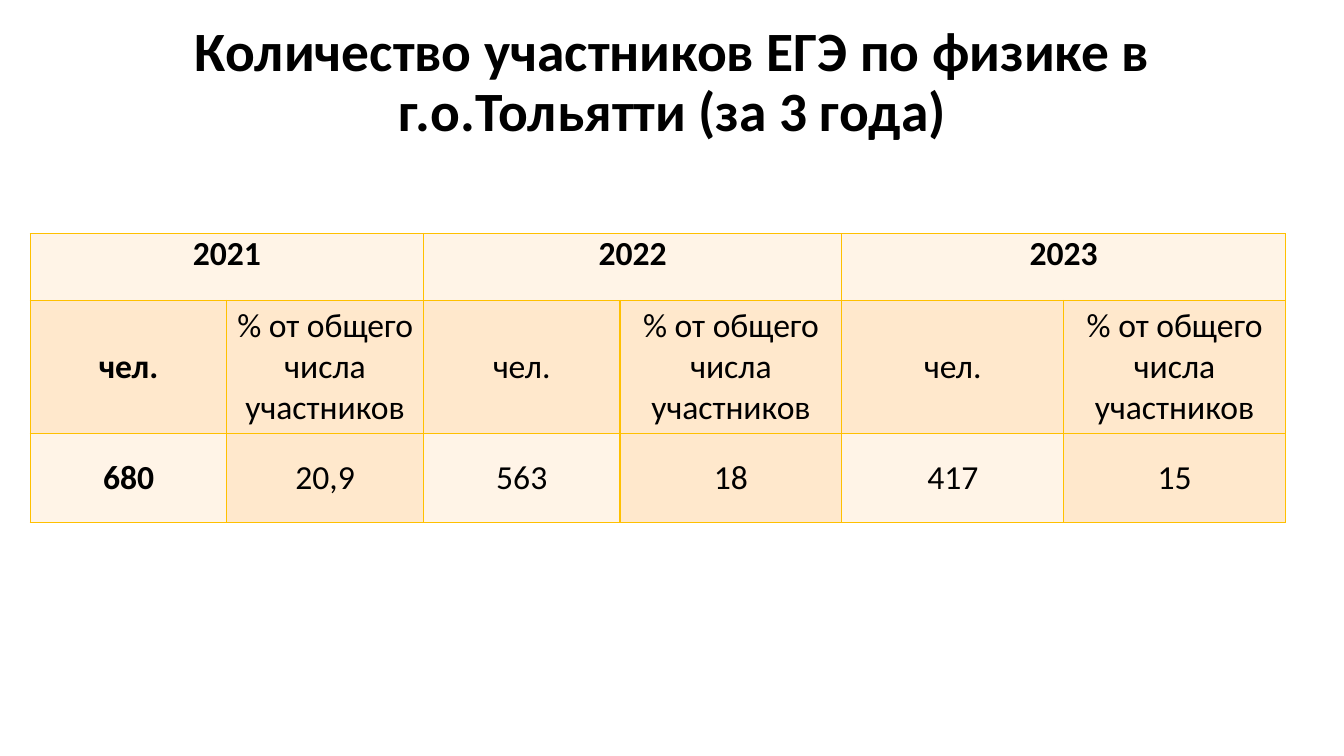
from lxml import etree
from pptx import Presentation
from pptx import util as u
from pptx.dml.color import RGBColor
from pptx.enum import text
from pptx.oxml.ns import qn

PX = 9144
FONT = "Calibri"
COLORS = {"ink": "000000", "pale": "FFF4E7", "peach": "FFE8CC", "gold": "FFC000"}
TITLE = "Количество участников ЕГЭ по физике в г.о.Тольятти (за 3\u00a0года)"
SHARE = "% от общего числа участников"
RESULTS = {"2021": ("680", "20,9"), "2022": ("563", "18"), "2023": ("417", "15")}
COL_WIDTHS = [195] * 3 + [220] * 3
ROW_HEIGHTS = [66, 132, 88]


def px(n):
    return u.Emu(n * PX)


def rgb(name):
    return RGBColor.from_string(COLORS[name])


def format_text(tf, size, bold):
    for p in tf.paragraphs:
        p.alignment = text.PP_ALIGN.CENTER
        for r in p.runs:
            r.font.name = FONT
            r.font.size = u.Pt(size)
            r.font.bold = bold
            r.font.color.rgb = rgb("ink")


def add_borders(cell):
    tc_pr = cell._tc.get_or_add_tcPr()
    for i, side in enumerate(("lnL", "lnR", "lnT", "lnB")):
        ln = etree.Element(qn(f"a:{side}"), w=str(u.Pt(1)))
        fill = etree.SubElement(ln, qn("a:solidFill"))
        etree.SubElement(fill, qn("a:srgbClr"), val=COLORS["gold"])
        tc_pr.insert(i, ln)


def fill_cell(cell, words, color, bold, anchor):
    cell.text_frame.text = words
    cell.vertical_anchor = anchor
    cell.margin_left = cell.margin_right = px(7)
    cell.margin_top = cell.margin_bottom = 0
    cell.fill.solid()
    cell.fill.fore_color.rgb = rgb(color)
    format_text(cell.text_frame, 24, bold)


def place_title(slide, left, top, width, height):
    sp = slide.shapes.title
    sp.left, sp.top, sp.width, sp.height = map(px, (left, top, width, height))
    tf = sp.text_frame
    tf.text = TITLE
    tf.word_wrap = True
    tf.auto_size = text.MSO_AUTO_SIZE.NONE
    tf.vertical_anchor = text.MSO_ANCHOR.MIDDLE
    tf.margin_bottom = px(64)
    tf.paragraphs[0].line_spacing = 0.9
    format_text(tf, 39.6, True)


def place_results(slide, left, top):
    frame = slide.shapes.add_table(
        len(ROW_HEIGHTS), len(COL_WIDTHS), px(left), px(top),
        px(sum(COL_WIDTHS)), px(sum(ROW_HEIGHTS)))
    table = frame.table
    for col, width in zip(table.columns, COL_WIDTHS):
        col.width = px(width)
    for row, height in zip(table.rows, ROW_HEIGHTS):
        row.height = px(height)

    middle = text.MSO_ANCHOR.MIDDLE
    for i, (year, (people, share)) in enumerate(RESULTS.items()):
        c = 2 * i
        table.cell(0, c).merge(table.cell(0, c + 1))
        fill_cell(table.cell(0, c), year, "pale", True, text.MSO_ANCHOR.TOP)
        fill_cell(table.cell(1, c), "чел.", "peach", i == 0, middle)
        fill_cell(table.cell(1, c + 1), SHARE, "peach", False, middle)
        fill_cell(table.cell(2, c), people, "pale", i == 0, middle)
        fill_cell(table.cell(2, c + 1), share, "peach", False, middle)
    for cell in table.iter_cells():
        add_borders(cell)


def main():
    prs = Presentation()
    prs.slide_width, prs.slide_height = px(1333), px(750)
    slide = prs.slides.add_slide(prs.slide_layouts[5])
    place_title(slide, 92, 40, 1150, 145)
    place_results(slide, 30, 232)
    prs.save("out.pptx")


if __name__ == "__main__":
    main()
